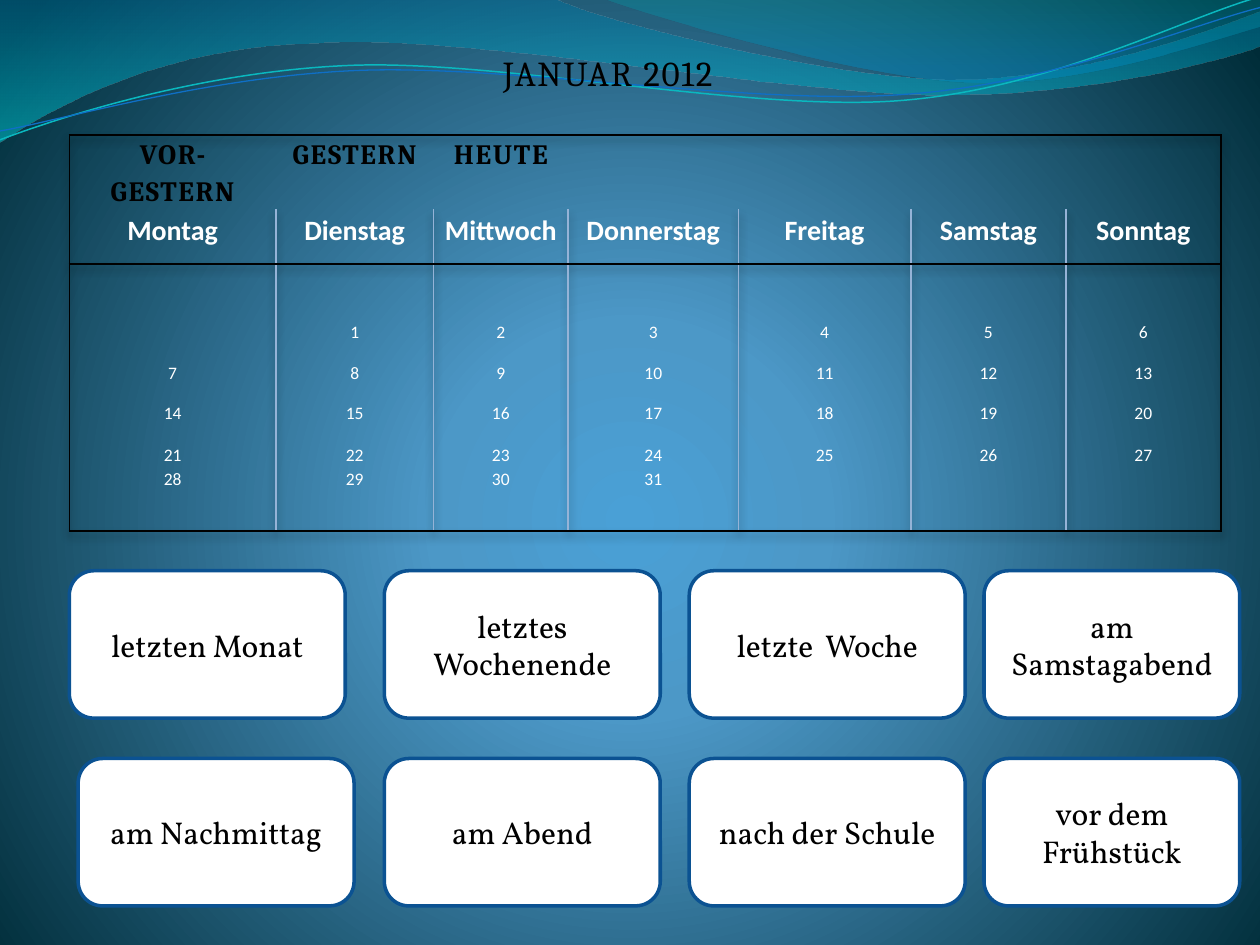
"""Build a German calendar slide with time expressions on cards."""
import lxml.etree
import pptx
import pptx.dml.color
import pptx.enum.shapes
import pptx.enum.text
import pptx.oxml.ns
import pptx.util

Inches = pptx.util.Inches
qn = pptx.oxml.ns.qn

THEME = {
    "heading_font": "Cambria", "table_font": "Calibri", "card_font": "Vollkorn",
    "title_size": 20, "heading_size": 16, "date_size": 10, "card_size": 18,
    "black": "000000", "white": "FFFFFF", "grid": "95B3D7", "card_line": "0B5292",
    "background": [(0, "4AA0D6", 100), (25, "4C98C7", 100), (100, "002C38", 100)],
}
TITLE = "JANUAR 2012"
RELATIVE_DAYS = ["VOR-\nGESTERN", "GESTERN", "HEUTE", "", "", "", ""]
WEEKDAYS = ["Montag", "Dienstag", "Mittwoch", "Donnerstag", "Freitag", "Samstag", "Sonntag"]
WEEKS = [
    [""] * 7,
    ["", "1", "2", "3", "4", "5", "6"],
    ["7", "8", "9", "10", "11", "12", "13"],
    ["14", "15", "16", "17", "18", "19", "20"],
    ["21\n28", "22\n29", "23\n30", "24\n31", "25", "26", "27"],
]
COLUMN_WIDTHS = [1.64, 1.25, 1.07, 1.35, 1.37, 1.23, 1.23]
ROW_HEIGHTS = [0.68, 0.58, 0.44, 0.43, 0.33, 0.32, 0.33, 0.71]
RULED_ROWS = (0, 2, 7)
CARD_ROWS = [
    (4.53, 0.55, ["letzten Monat", "letztes Wochenende", "letzte  Woche", "am Samstagabend"]),
    (6.02, 0.62, ["am Nachmittag", "am Abend", "nach der Schule", "vor dem Frühstück"]),
]
CARD_LEFTS = [3.05, 5.47, 7.81]
CARD_WIDTHS = [2.19, 2.19, 2.19, 2.03]
CARD_HEIGHT = 1.17
WAVES = [
    {"path": [(0, 0), (4.4, -0.01), (4.76, 0.17, 6.64, 0.63, 7.58, 0.63),
              (8.53, 0.63, 9.58, 0.26, 10, 0.09), (10.01, 0.36),
              (9.83, 0.44, 8.7, 0.76, 7.46, 0.75), (6.22, 0.75, 3.82, 0.28, 2.57, 0.34),
              (1.29, 0.36, 0.46, 0.83, -0.01, 1.13)],
     "stops": [(0, "0074A1", 45), (100, "00C6CF", 55)]},
    {"path": [(4.79, -0.01), (5.09, 0.11, 6.82, 0.62, 7.69, 0.65),
              (8.56, 0.69, 9.61, 0.32, 10, 0.21), (10, 0)],
     "stops": [(0, "00A1A9", 30), (80, "008BBF", 45)]},
    {"path": [(0, 1.11), (0.48, 0.93, 1.58, 0.57, 2.77, 0.52),
              (3.95, 0.47, 5.93, 0.89, 7.13, 0.8), (8.33, 0.71, 9.38, 0.15, 9.98, -0.02)],
     "line": ("0AB8BF", 0.85)},
    {"path": [(0, 1.04), (0.47, 0.96, 1.64, 0.61, 2.83, 0.56),
              (4.03, 0.51, 5.97, 0.84, 7.17, 0.75), (8.36, 0.67, 9.41, 0.21, 10, 0.06)],
     "line": ("0F6FC6", 0.75)},
]


def color(value):
    return pptx.dml.color.RGBColor.from_string(value)


def add_node(parent, tag, **attributes):
    node = lxml.etree.SubElement(parent, qn(tag))
    for name, value in attributes.items():
        node.set(name, str(value))
    return node


def add_color(parent, value, opacity=100):
    node = add_node(parent, "a:srgbClr", val=value)
    if opacity < 100:
        add_node(node, "a:alpha", val=opacity * 1000)


def write_text(frame, text, *, font, size, ink, bold=False, spacing=0, line_spacing=None):
    for index, line in enumerate(text.split("\n")):
        paragraph = frame.add_paragraph() if index else frame.paragraphs[0]
        paragraph.alignment = pptx.enum.text.PP_ALIGN.CENTER
        paragraph.line_spacing = line_spacing
        run = paragraph.add_run()
        run.text = line
        run.font.name = font
        run.font.size = pptx.util.Pt(size)
        run.font.bold = bold
        run.font.color.rgb = color(ink)
        if spacing:
            run._r.get_or_add_rPr().set("spc", str(spacing * 100))


def set_gradient(fill, parent, stops, circular=False):
    fill.solid()
    solid = parent.find(qn("a:solidFill"))
    gradient = lxml.etree.Element(qn("a:gradFill"), rotWithShape="1")
    stop_list = add_node(gradient, "a:gsLst")
    for position, value, opacity in stops:
        add_color(add_node(stop_list, "a:gs", pos=position * 1000), value, opacity)
    if circular:
        path = add_node(gradient, "a:path", path="circle")
        add_node(path, "a:fillToRect", l=10000, t=110000, r=10000, b=100000)
    else:
        add_node(gradient, "a:lin", ang=5400000, scaled=1)
    parent.replace(solid, gradient)


def bend_segments(shape, segments):
    lines = list(shape._element.iter(qn("a:lnTo")))
    for line, segment in zip(lines, segments):
        if len(segment) == 6:
            curve = lxml.etree.Element(qn("a:cubicBezTo"))
            for x, y in zip(segment[::2], segment[1::2]):
                add_node(curve, "a:pt", x=Inches(x) - shape.left, y=Inches(y) - shape.top)
            line.getparent().replace(line, curve)


def add_wave(slide, wave):
    path = wave["path"]
    points = [(Inches(segment[-2]), Inches(segment[-1])) for segment in path]
    builder = slide.shapes.build_freeform(*points[0], scale=1.0)
    builder.add_line_segments(points[1:], close="stops" in wave)
    shape = builder.convert_to_shape()
    bend_segments(shape, path[1:])
    shape.shadow.inherit = False
    if "stops" in wave:
        set_gradient(shape.fill, shape._element.spPr, wave["stops"])
        shape.line.fill.background()
    else:
        shape.fill.background()
        value, width = wave["line"]
        shape.line.color.rgb = color(value)
        shape.line.width = pptx.util.Pt(width)


def format_cell(cell, row, column):
    last = len(COLUMN_WIDTHS) - 1
    black, grid = THEME["black"], THEME["grid"]
    inner = grid if row >= 2 else None
    outer = black if row >= 1 else None
    edges = {
        "a:lnL": outer if column == 0 else inner,
        "a:lnR": outer if column == last else inner,
        "a:lnT": black if row - 1 in RULED_ROWS else None,
        "a:lnB": black if row in RULED_ROWS else None,
    }
    cell.margin_left = cell.margin_right = Inches(0.07)
    cell.margin_top = cell.margin_bottom = 0
    properties = cell._tc.get_or_add_tcPr()
    for tag, value in edges.items():
        line = add_node(properties, tag, w=pptx.util.Pt(1))
        if value:
            add_color(add_node(line, "a:solidFill"), value)
        else:
            add_node(line, "a:noFill")
    cell.fill.background()


def add_calendar(slide):
    rows = [[TITLE] + [""] * 6, RELATIVE_DAYS, WEEKDAYS, *WEEKS]
    heading = {"font": THEME["heading_font"], "ink": THEME["black"], "spacing": 1}
    day = {"font": THEME["table_font"], "ink": THEME["white"]}
    styles = [
        {**heading, "size": THEME["title_size"]},
        {**heading, "size": THEME["heading_size"], "bold": True},
        {**day, "size": THEME["heading_size"], "bold": True},
    ] + [{**day, "size": THEME["date_size"]}] * len(WEEKS)
    table = slide.shapes.add_table(
        len(rows), len(COLUMN_WIDTHS), Inches(0.55), Inches(0.39),
        Inches(sum(COLUMN_WIDTHS)), Inches(sum(ROW_HEIGHTS))).table
    table.first_row = table.horz_banding = False
    properties = table._tbl.tblPr
    properties.find(qn("a:tableStyleId")).text = "{2D5ABB26-0587-4C30-8999-92F81FD0307C}"
    effects = lxml.etree.Element(qn("a:effectLst"))
    properties.insert(0, effects)
    shadow = add_node(effects, "a:outerShdw", blurRad=57150, dist=38100, dir=5400000)
    add_color(shadow, THEME["black"], 48)
    for column, width in zip(table.columns, COLUMN_WIDTHS):
        column.width = Inches(width)
    for row_index, (texts, style) in enumerate(zip(rows, styles)):
        table.rows[row_index].height = Inches(ROW_HEIGHTS[row_index])
        for column_index, text in enumerate(texts):
            cell = table.cell(row_index, column_index)
            format_cell(cell, row_index, column_index)
            if text:
                write_text(cell.text_frame, text, line_spacing=1.15, **style)
    title_cell = table.cell(0, 0)
    title_cell.merge(table.cell(0, len(COLUMN_WIDTHS) - 1))
    title_cell.margin_right = Inches(0.66)


def add_card(slide, text, left, top, width):
    card = slide.shapes.add_shape(
        pptx.enum.shapes.MSO_SHAPE.FLOWCHART_ALTERNATE_PROCESS,
        Inches(left), Inches(top), Inches(width), Inches(CARD_HEIGHT))
    card.shadow.inherit = False
    card.fill.solid()
    card.fill.fore_color.rgb = color(THEME["white"])
    card.line.color.rgb = color(THEME["card_line"])
    card.line.width = pptx.util.Pt(2)
    card.text_frame.word_wrap = True
    card.text_frame.vertical_anchor = pptx.enum.text.MSO_ANCHOR.MIDDLE
    write_text(card.text_frame, text, font=THEME["card_font"],
               size=THEME["card_size"], ink=THEME["black"])


def main():
    presentation = pptx.Presentation()
    presentation.slide_width, presentation.slide_height = Inches(10), Inches(7.5)
    slide = presentation.slides.add_slide(presentation.slide_layouts[6])
    fill = slide.background.fill
    fill.solid()
    set_gradient(fill, slide._element.cSld.find(qn("p:bg")).find(qn("p:bgPr")),
                 THEME["background"], circular=True)
    for wave in WAVES:
        add_wave(slide, wave)
    add_calendar(slide)
    for top, first_left, texts in CARD_ROWS:
        for text, left, width in zip(texts, [first_left, *CARD_LEFTS], CARD_WIDTHS):
            add_card(slide, text, left, top, width)
    presentation.save("out.pptx")


if __name__ == "__main__":
    main()
